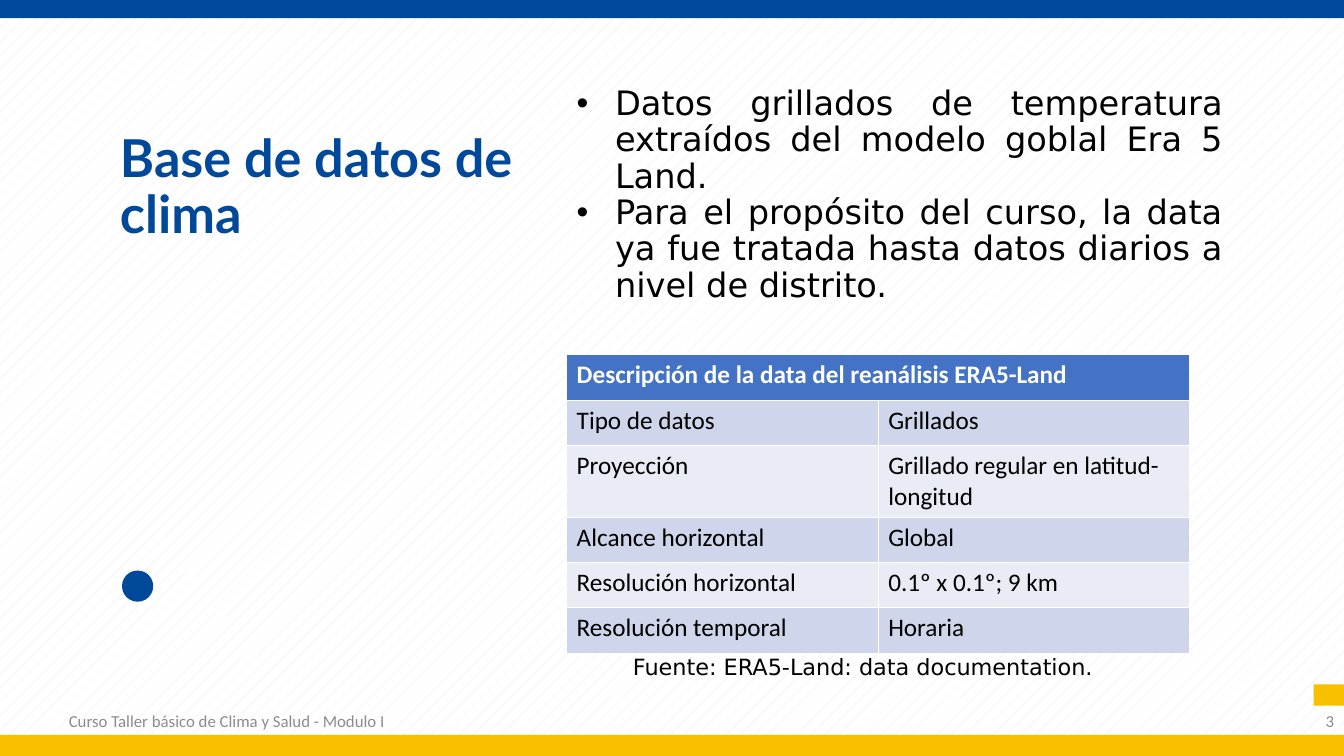
from lxml.etree import SubElement
from pptx import Presentation
from pptx.dml.color import RGBColor
from pptx.enum.dml import MSO_PATTERN
from pptx.enum.shapes import MSO_SHAPE
from pptx.enum.text import MSO_ANCHOR, MSO_AUTO_SIZE, PP_ALIGN
from pptx.oxml.ns import qn
from pptx.util import Inches, Pt

W, H = 13.33, 7.5
BLUE, YELLOW, GREY, BLACK, WHITE = "00499A", "F9C000", "8C8C8C", "000000", "FFFFFF"
HEADER, BANDS = "4472C4", ("CFD5EA", "E9EBF5")
SANS = "DejaVu Sans"

TITLE = "Base de datos de clima"
BULLETS = [
    "Datos grillados de temperatura extraídos del modelo goblal Era 5 Land.",
    "Para el propósito del curso, la data ya fue tratada hasta datos diarios a nivel de distrito.",
]
ROWS = [
    ("Descripción de la data del reanálisis ERA5-Land",),
    ("Tipo de datos", "Grillados"),
    ("Proyección", "Grillado regular en latitud-longitud"),
    ("Alcance horizontal", "Global"),
    ("Resolución horizontal", "0.1º x 0.1º; 9 km"),
    ("Resolución temporal", "Horaria"),
]
SOURCE = "Fuente: ERA5-Land: data documentation."
FOOTER = "Curso Taller básico de Clima y Salud - Modulo I"
PAGE = "3"

BAR = 0.21
CONTENT_X = 5.62
ROW_H, COL_W = 0.45, 3.09
FOOT_Y, FOOT_H = 6.95, 0.4
INDENT = 0.38
DECOR = [
    (MSO_SHAPE.RECTANGLE, (0, 0, W, 0.18), BLUE),
    (MSO_SHAPE.RECTANGLE, (0, H - BAR, W, BAR), YELLOW),
    (MSO_SHAPE.RECTANGLE, (W - 0.3, 6.79, 0.3, BAR), YELLOW),
    (MSO_SHAPE.OVAL, (1.21, 5.66, 0.31, 0.31), BLUE),
]


def rgb(color):
    return RGBColor.from_string(color)


def inches(box):
    return [Inches(v) for v in box]


def add_run(p, text, size, font, color, bold=False):
    r = p.add_run()
    r.text = text
    r.font.size, r.font.name, r.font.bold = Pt(size), font, bold
    r.font.color.rgb = rgb(color)


def prepare(ph, box):
    """Place a placeholder and return its text frame, anchored at the top."""
    ph.left, ph.top, ph.width, ph.height = inches(box)
    tf = ph.text_frame
    tf.word_wrap, tf.auto_size = True, MSO_AUTO_SIZE.NONE
    tf.vertical_anchor = MSO_ANCHOR.TOP
    return tf


def add_label(s, box, text, size, font, color, align, anchor):
    tf = s.shapes.add_textbox(*inches(box)).text_frame
    tf.word_wrap, tf.vertical_anchor = True, anchor
    tf.paragraphs[0].alignment = align
    add_run(tf.paragraphs[0], text, size, font, color)


def add_bullet(p):
    pPr = p._p.get_or_add_pPr()
    pPr.set("marL", str(Inches(INDENT)))
    pPr.set("indent", str(-Inches(INDENT)))
    SubElement(pPr, qn("a:buFont")).set("typeface", "Arial")
    SubElement(pPr, qn("a:buChar")).set("char", "•")


def add_data_table(s):
    box = (CONTENT_X, 3.52, 2 * COL_W, ROW_H * len(ROWS))
    table = s.shapes.add_table(len(ROWS), 2, *inches(box)).table
    table.cell(0, 0).merge(table.cell(0, 1))
    for i, row in enumerate(ROWS):
        head = i == 0
        for j in range(2):
            fill = table.cell(i, j).fill
            fill.solid()
            fill.fore_color.rgb = rgb(HEADER if head else BANDS[(i - 1) % 2])
        for j, text in enumerate(row):
            p = table.cell(i, j).text_frame.paragraphs[0]
            add_run(p, text, 18, "Calibri", WHITE if head else BLACK, head)


prs = Presentation()
prs.slide_width, prs.slide_height = Inches(W), Inches(H)
s = prs.slides.add_slide(prs.slide_layouts[1])

bg = s.background.fill
bg.patterned()
bg.pattern = MSO_PATTERN.PERCENT_5
bg.fore_color.rgb, bg.back_color.rgb = rgb("E7E6E6"), rgb(WHITE)

for kind, box, color in DECOR:
    sp = s.shapes.add_shape(kind, *inches(box))
    sp.shadow.inherit = False
    sp.fill.solid()
    sp.fill.fore_color.rgb = rgb(color)
    sp.line.fill.background()

tf = prepare(s.shapes.title, (1.09, 1.26, 4.31, 2.49))
p = tf.paragraphs[0]
p.alignment, p.line_spacing = PP_ALIGN.LEFT, 0.9
add_run(p, TITLE, 37.3, "Lato", BLUE, True)

tf = prepare(s.placeholders[1], (CONTENT_X, 0.81, 6.61, 5.56))
for i, text in enumerate(BULLETS):
    p = tf.add_paragraph() if i else tf.paragraphs[0]
    add_bullet(p)
    p.alignment, p.line_spacing, p.space_before = PP_ALIGN.JUSTIFY, 0.9, Pt(0)
    add_run(p, text, 24, SANS, BLACK)

add_data_table(s)
add_label(s, (6.18, 6.43, 5.07, 0.37), SOURCE, 16, SANS, BLACK, PP_ALIGN.LEFT, MSO_ANCHOR.TOP)
add_label(s, (0, FOOT_Y, 4.5, FOOT_H), FOOTER, 12, "Calibri", GREY, PP_ALIGN.CENTER, MSO_ANCHOR.MIDDLE)
add_label(s, (W - 3, FOOT_Y, 3, FOOT_H), PAGE, 12, "Calibri", GREY, PP_ALIGN.RIGHT, MSO_ANCHOR.MIDDLE)

prs.save("out.pptx")
